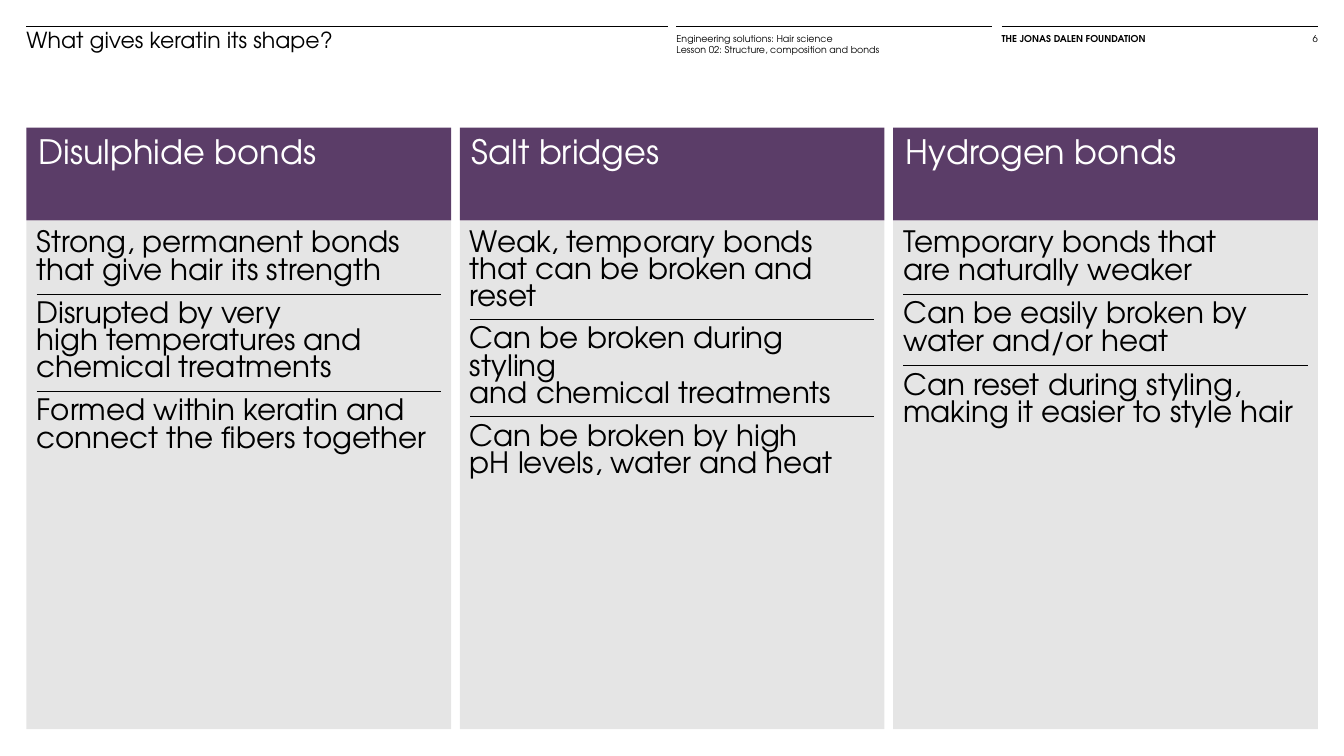
from lxml import etree
from pptx import Presentation
from pptx.dml.color import RGBColor
from pptx.enum.shapes import MSO_CONNECTOR, MSO_SHAPE
from pptx.enum.text import MSO_ANCHOR, PP_ALIGN
from pptx.oxml.ns import qn
from pptx.util import Cm, Pt

BLACK = RGBColor(0x00, 0x00, 0x00)
WHITE = RGBColor(0xFF, 0xFF, 0xFF)
PURPLE = RGBColor(0x5B, 0x3D, 0x68)
FONT = "TeX Gyre Adventor"
LEFT, RIGHT = PP_ALIGN.LEFT, PP_ALIGN.RIGHT
TOP, MIDDLE = MSO_ANCHOR.TOP, MSO_ANCHOR.MIDDLE
RECTANGLE = MSO_SHAPE.RECTANGLE
STRAIGHT = MSO_CONNECTOR.STRAIGHT

MARGIN = 0.89
COLUMN_WIDTH = 14.27
COLUMN_PITCH = 14.56
HEADING_HEIGHT = 3.12
RULE_WIDTH = Pt(0.5)

BONDS = [
    ("Disulphide bonds", [
        "Strong, permanent bonds\vthat give hair its strength",
        "Disrupted by very\vhigh temperatures and\vchemical treatments",
        "Formed within keratin and\vconnect the fibers together",
    ]),
    ("Salt bridges", [
        "Weak, temporary bonds\vthat can be broken and reset",
        "Can be broken during styling\vand chemical treatments",
        "Can be broken by high\vpH levels, water and heat",
    ]),
    ("Hydrogen bonds", [
        "Temporary bonds that\vare naturally weaker",
        "Can be easily broken by\vwater and/or heat",
        "Can reset during styling,\vmaking it easier to style hair",
    ]),
]


def write_text(frame, text, size, color=BLACK, bold=False, align=LEFT,
               spacing=None, anchor=TOP, insets=(0, 0, 0, 0)):
    frame.word_wrap = True
    frame.vertical_anchor = anchor
    (frame.margin_left, frame.margin_top,
     frame.margin_right, frame.margin_bottom) = [Cm(inset) for inset in insets]
    for index, line in enumerate(text.split("\n")):
        para = frame.paragraphs[0] if index == 0 else frame.add_paragraph()
        para.text = line
        para.alignment = align
        para.line_spacing = spacing
        for span in para.runs:
            span.font.name = FONT
            span.font.size = Pt(size)
            span.font.bold = bold
            span.font.color.rgb = color


def add_label(page, left, top, width, height, text, size, **style):
    box = page.shapes.add_textbox(Cm(left), Cm(top), Cm(width), Cm(height))
    write_text(box.text_frame, text, size, **style)


def add_rule(page, left, top, width):
    rule = page.shapes.add_connector(
        STRAIGHT, Cm(left), Cm(top), Cm(left + width), Cm(top))
    rule.line.color.rgb = BLACK
    rule.line.width = RULE_WIDTH
    etree.SubElement(rule._element.spPr, qn("a:effectLst"))


def add_panel(page, left, top, width, height, color):
    panel = page.shapes.add_shape(
        RECTANGLE, Cm(left), Cm(top), Cm(width), Cm(height))
    panel.shadow.inherit = False
    panel.fill.solid()
    panel.fill.fore_color.rgb = color
    panel.line.fill.background()
    return panel


def set_borders(cell, ruled_sides):
    properties = cell._tc.get_or_add_tcPr()
    for position, side in enumerate("LRTB"):
        border = etree.Element(qn(f"a:ln{side}"))
        if side in ruled_sides:
            border.set("w", str(RULE_WIDTH))
            fill = etree.SubElement(border, qn("a:solidFill"))
            etree.SubElement(fill, qn("a:srgbClr"), val=str(BLACK))
        else:
            etree.SubElement(border, qn("a:noFill"))
        properties.insert(position, border)


def add_facts(page, left, top, width, facts):
    row_height = 2.39
    frame = page.shapes.add_table(
        len(facts), 1, Cm(left), Cm(top), Cm(width), Cm(row_height * len(facts)))
    table = frame.table
    table.first_row = False
    table.horz_banding = False
    for index, fact in enumerate(facts):
        table.rows[index].height = Cm(row_height)
        cell = table.cell(index, 0)
        cell.fill.background()
        write_text(cell.text_frame, fact, 28, spacing=Pt(26))
        cell.vertical_anchor = MIDDLE
        cell.margin_left = 0
        cell.margin_top = cell.margin_right = cell.margin_bottom = Cm(0.25)
        above = "T" if index > 0 else ""
        below = "B" if index < len(facts) - 1 else ""
        set_borders(cell, above + below)


def add_bond_column(page, left, top, width, height, heading, facts):
    header = add_panel(page, left, top, width, HEADING_HEIGHT, PURPLE)
    write_text(header.text_frame, heading, 32, color=WHITE, spacing=0.9,
               insets=(0.41, 0.25, 0, 0))
    body_top = top + HEADING_HEIGHT
    body = add_panel(page, left, body_top, width, height - HEADING_HEIGHT, BLACK)
    tint = body._element.spPr.find(qn("a:solidFill"))[0]
    etree.SubElement(tint, qn("a:alpha"), val="10000")
    add_facts(page, left + 0.34, body_top + 0.08, width - 0.68, facts)


def add_page_header(page, left, top, width):
    lesson_left, owner_left = left + 21.84, left + 32.77
    label_top = top + 0.23
    add_rule(page, left, top, 21.54)
    add_rule(page, lesson_left, top, 10.61)
    add_rule(page, owner_left, top, width - 32.77)
    add_label(page, left, top, 21.54, 2.11, "What gives keratin its shape?", 21,
              spacing=0.9, insets=(0, 0.1, 0.25, 0))
    add_label(page, lesson_left, label_top, 10.61, 0.76,
              "Engineering solutions: Hair science\n"
              "Lesson 02: Structure, composition and bonds", 9, spacing=Pt(10.5))
    add_label(page, owner_left, label_top, 6.96, 0.38,
              "THE JONAS DALEN FOUNDATION", 9, bold=True, spacing=Pt(10.5))
    add_label(page, left + width - 3.33, label_top, 3.33, 0.38, "6", 9,
              align=RIGHT)


def main():
    deck = Presentation()
    deck.slide_width = Cm(45.16)
    deck.slide_height = Cm(25.4)
    page = deck.slides.add_slide(deck.slide_layouts[6])
    add_page_header(page, MARGIN, MARGIN, 2 * COLUMN_PITCH + COLUMN_WIDTH)
    for index, (heading, facts) in enumerate(BONDS):
        add_bond_column(page, MARGIN + index * COLUMN_PITCH, 4.29,
                        COLUMN_WIDTH, 20.21, heading, facts)
    deck.save("out.pptx")


if __name__ == "__main__":
    main()
